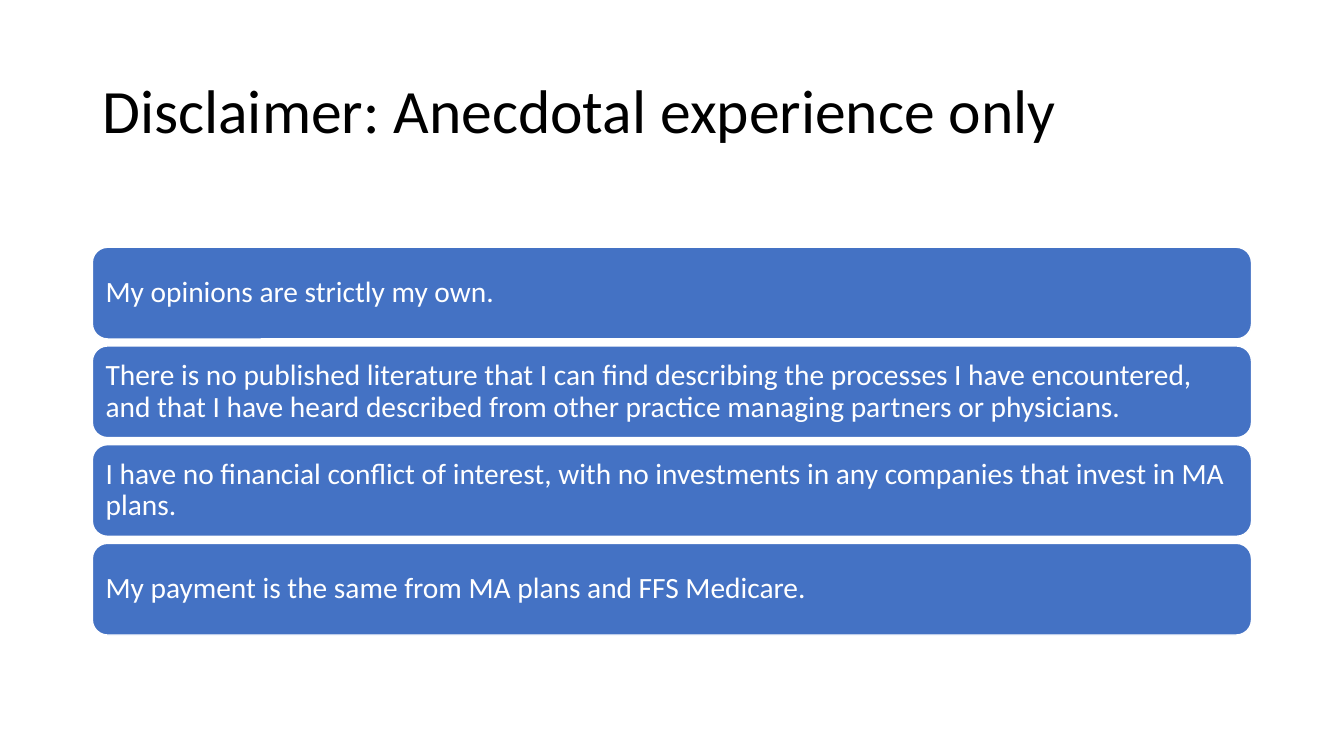
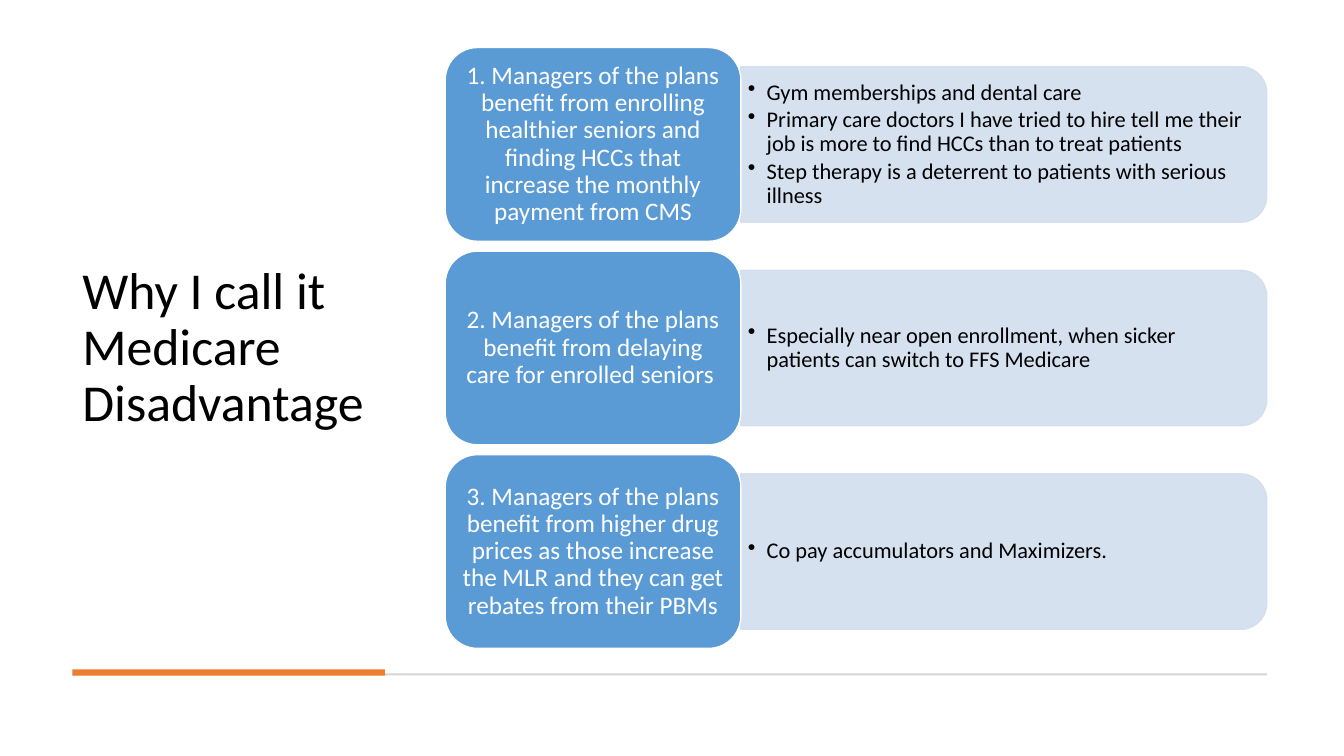
import pptx
import pptx.dml.color
import pptx.enum.shapes
import pptx.enum.text
import pptx.oxml
import pptx.oxml.ns
import pptx.util

Pt = pptx.util.Pt
SHAPE = pptx.enum.shapes.MSO_SHAPE
ALIGN = pptx.enum.text.PP_ALIGN


def color(hex_code):
    return pptx.dml.color.RGBColor.from_string(hex_code)


class Deck:
    """Shared style and the slide being drawn."""

    FONT = "Calibri"
    BLACK, WHITE = "000000", "FFFFFF"
    BAR, CARD, PANEL = "4472C4", "5B9BD5", "D2DEEF"
    RULE, ACCENT = "D5D5D5", "ED7D31"
    LINE_SPACING = 0.9
    HANG = 13.5

    def __init__(self):
        self.prs = pptx.Presentation()
        self.prs.slide_width, self.prs.slide_height = Pt(960), Pt(540)
        self.slide = None

    def new_slide(self):
        self.slide = self.prs.slides.add_slide(self.prs.slide_layouts[6])

    def set_text(self, shape, lines, size, hex_code, insets=(7.2, 3.6),
                 align=ALIGN.LEFT, after=0.0, bullets=False):
        """Fill a shape with paragraphs; after is a share of the text size."""
        frame = shape.text_frame
        frame.word_wrap = True
        frame.vertical_anchor = pptx.enum.text.MSO_ANCHOR.MIDDLE
        frame.margin_left = frame.margin_right = Pt(insets[0])
        frame.margin_top = frame.margin_bottom = Pt(insets[1])
        for index, line in enumerate(lines):
            paragraph = frame.paragraphs[0] if index == 0 else frame.add_paragraph()
            paragraph.text = line
            paragraph.alignment = align
            paragraph.line_spacing = self.LINE_SPACING
            paragraph.space_after = Pt(size * after)
            paragraph.font.name = self.FONT
            paragraph.font.size = Pt(size)
            paragraph.font.color.rgb = color(hex_code)
            if bullets:
                self.add_bullet(paragraph)

    def add_bullet(self, paragraph):
        properties = paragraph._p.get_or_add_pPr()
        properties.set("marL", str(Pt(self.HANG)))
        properties.set("indent", str(-Pt(self.HANG)))
        bullet = pptx.oxml.parse_xml(
            f'<a:buChar {pptx.oxml.ns.nsdecls("a")} char="•"/>')
        properties.insert_element_before(bullet, "a:tabLst", "a:defRPr", "a:extLst")

    def text(self, left, top, width, height, lines, size, **style):
        box = self.slide.shapes.add_textbox(Pt(left), Pt(top), Pt(width), Pt(height))
        self.set_text(box, lines, size, self.BLACK, **style)

    def title(self, left, top, width, height, words, size):
        self.text(left, top, width, height, [words], size)

    def shape(self, kind, left, top, width, height, fill, line=None):
        shape = self.slide.shapes.add_shape(
            kind, Pt(left), Pt(top), Pt(width), Pt(height))
        shape.shadow.inherit = False
        shape.fill.solid()
        shape.fill.fore_color.rgb = color(fill)
        if line:
            shape.line.color.rgb = color(line)
            shape.line.width = Pt(1)
        else:
            shape.line.fill.background()
        return shape

    def box(self, left, top, width, height, fill, words, size, **style):
        box = self.shape(SHAPE.ROUNDED_RECTANGLE, left, top, width, height,
                         fill, self.WHITE)
        self.set_text(box, [words], size, self.WHITE, after=0.35, **style)

    def panel(self, left, top, width, height, lines):
        """Slightly transparent panel, rounded on its right side only."""
        # The preset rounds its top, so it is drawn upright and turned
        panel = self.shape(SHAPE.ROUND_2_SAME_RECTANGLE,
                           left + (width - height) / 2, top + (height - width) / 2,
                           height, width, self.PANEL, self.PANEL)
        panel.rotation = 90
        for rgb in panel._element.spPr.iter(pptx.oxml.ns.qn("a:srgbClr")):
            rgb.append(pptx.oxml.parse_xml(
                f'<a:alpha {pptx.oxml.ns.nsdecls("a")} val="90000"/>'))
        self.text(left, top + 5.4, width - 5.4, height - 10.8, lines, 16,
                  insets=(5, 2.5), after=0.15, bullets=True)


def disclaimer(deck):
    deck.new_slide()
    deck.title(66, 28.75, 828, 104.4, "Disclaimer: Anecdotal experience only", 44)
    statements = [
        "My opinions are strictly my own.",
        "There is no published literature that I can find describing the processes "
        "I have encountered, and that I have heard described from other practice "
        "managing partners or physicians.",
        "I have no financial conflict of interest, with no investments in any "
        "companies that invest in MA plans.",
        "My payment is the same from MA plans and FFS Medicare.",
    ]
    for row, statement in enumerate(statements):
        deck.box(66, 176.6 + 70.5 * row, 828, 65.5, deck.BAR, statement, 21,
                 insets=(6.3, 6.3))


def disadvantage(deck):
    deck.new_slide()
    deck.title(51.8, 33.8, 223.2, 430, "Why I call it Medicare Disadvantage", 37)

    # Rule with accent at the foot
    deck.shape(SHAPE.RECTANGLE, 51.8, 481, 853.2, 1.4, deck.RULE)
    deck.shape(SHAPE.RECTANGLE, 51.8, 478.1, 223.2, 4.6, deck.ACCENT)

    # Reasons on cards, examples on panels beside them
    reasons = [
        ("1. Managers of the plans benefit from enrolling healthier seniors and "
         "finding HCCs that increase the monthly payment from CMS",
         ["Gym memberships and dental care",
          "Primary care doctors I have tried to hire tell me their job is more "
          "to find HCCs than to treat patients",
          "Step therapy is a deterrent to patients with serious illness"]),
        ("2. Managers of the plans benefit from delaying care for enrolled seniors ",
         ["Especially near open enrollment, when sicker patients can switch to "
          "FFS Medicare"]),
        ("3. Managers of the plans benefit from higher drug prices as those "
         "increase the MLR and they can get rebates from their PBMs",
         ["Co pay accumulators and Maximizers."]),
    ]
    card_left, card_width, card_height, panel_height = 318, 211.2, 138.4, 111
    for row, (reason, examples) in enumerate(reasons):
        top = 34 + 145.4 * row
        deck.panel(card_left + card_width, top + (card_height - panel_height) / 2,
                   375.6, panel_height, examples)
        deck.box(card_left, top, card_width, card_height, deck.CARD, reason, 18,
                 insets=(5.4, 2.7), align=ALIGN.CENTER)


def main():
    deck = Deck()
    disclaimer(deck)
    disadvantage(deck)
    deck.prs.save("out.pptx")


if __name__ == "__main__":
    main()
